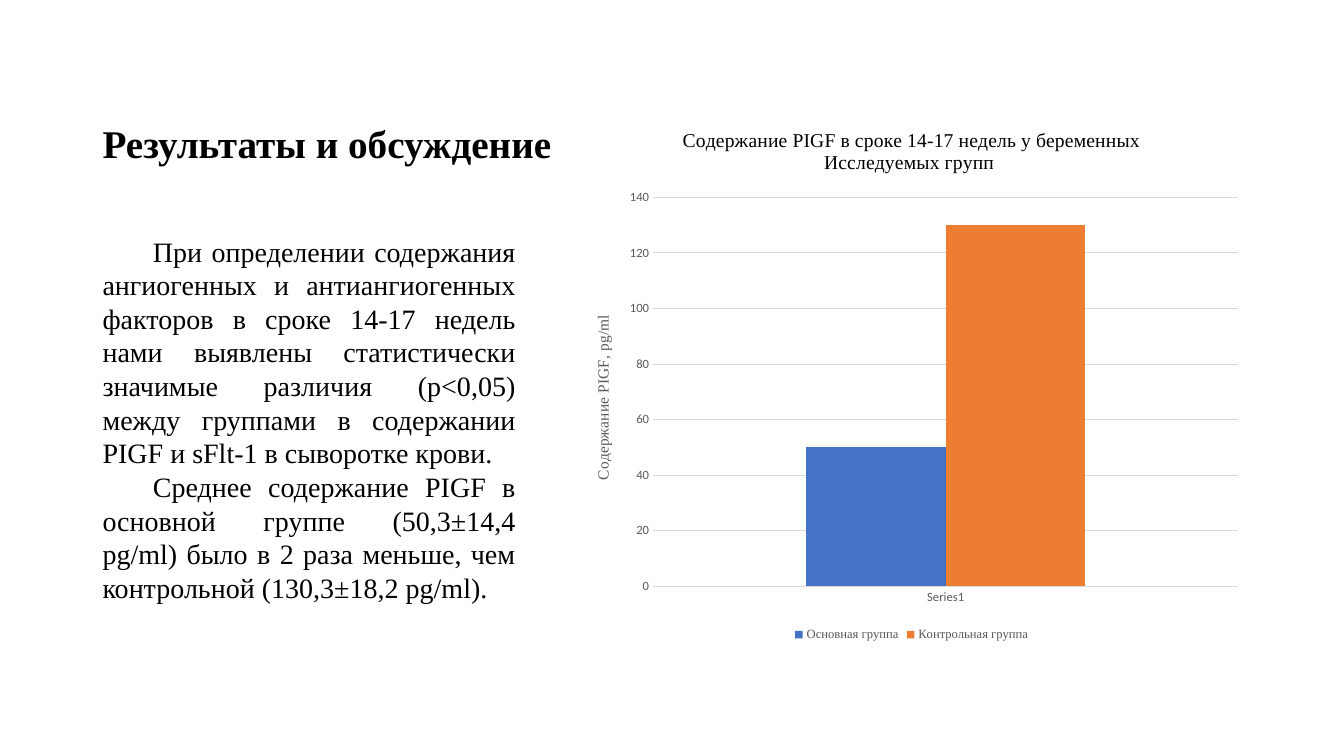
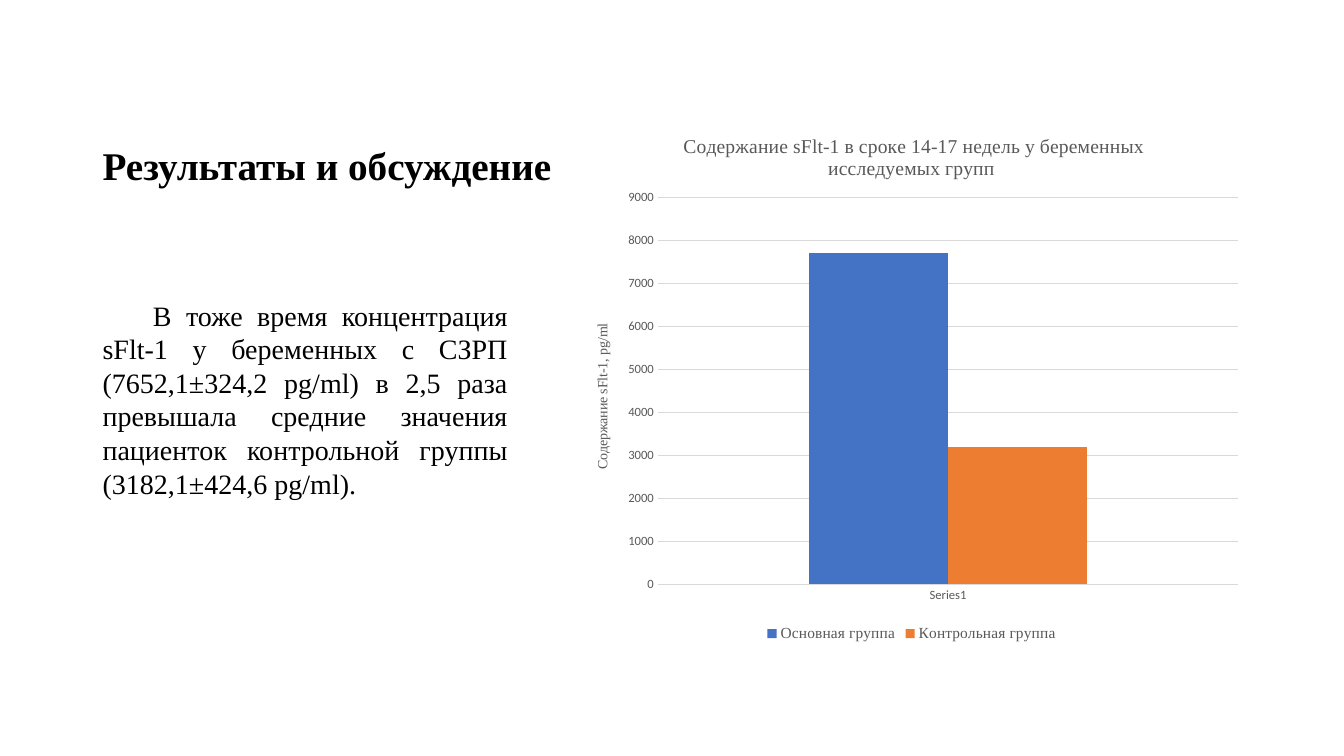
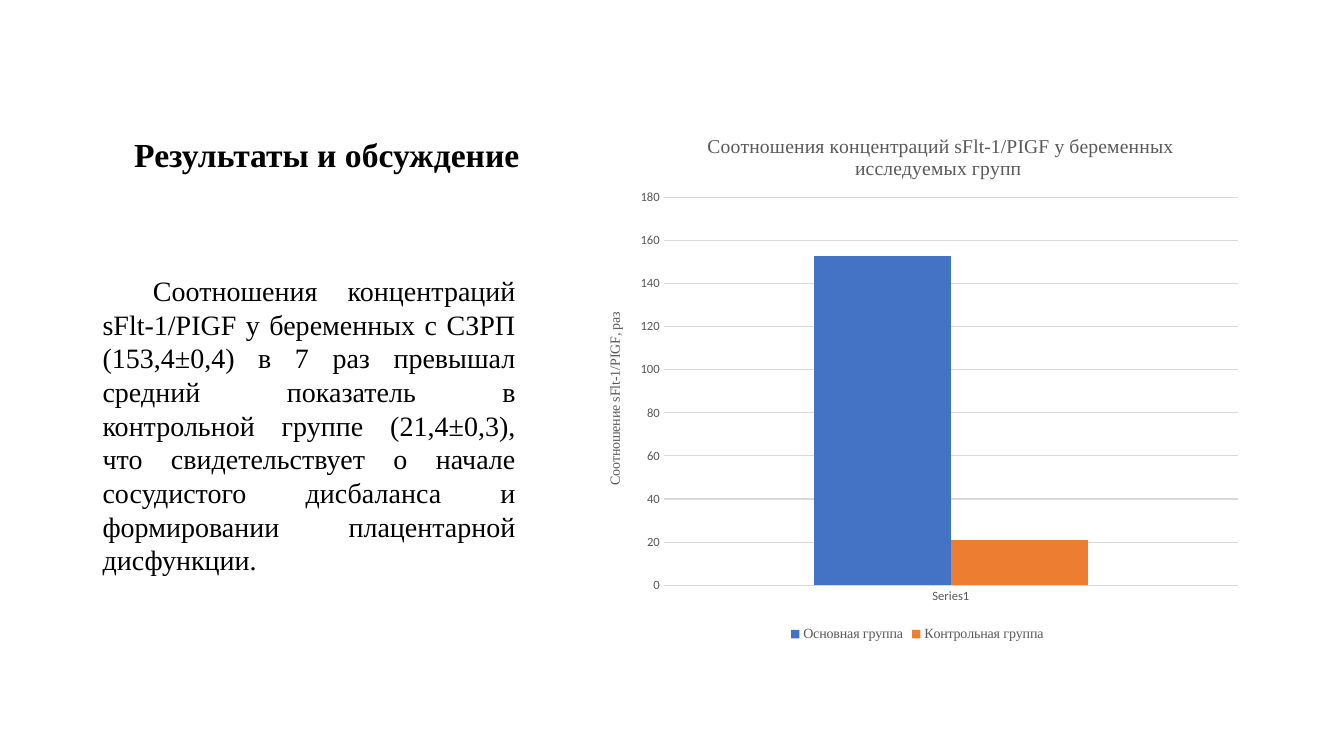
from lxml import etree
from pptx import Presentation
from pptx.chart.data import CategoryChartData
from pptx.dml.color import RGBColor
from pptx.enum.chart import XL_CHART_TYPE, XL_LEGEND_POSITION, XL_TICK_MARK
from pptx.enum.text import MSO_ANCHOR, MSO_AUTO_SIZE, PP_ALIGN
from pptx.oxml import parse_xml
from pptx.oxml.ns import nsdecls, qn
from pptx.util import Cm, Pt

CLUSTERED = XL_CHART_TYPE.COLUMN_CLUSTERED
LEGEND_BOTTOM = XL_LEGEND_POSITION.BOTTOM
NO_TICK = XL_TICK_MARK.NONE
MIDDLE = MSO_ANCHOR.MIDDLE
NO_AUTOFIT = MSO_AUTO_SIZE.NONE
LEFT, CENTER, JUSTIFY = PP_ALIGN.LEFT, PP_ALIGN.CENTER, PP_ALIGN.JUSTIFY

COLORS = {
    "text": "000000",
    "muted": "595959",
    "line": "D9D9D9",
    "Основная группа": "4472C4",
    "Контрольная группа": "ED7D31",
}
SERIF = "Times New Roman"
SANS = "Calibri"
TITLE = "Результаты и обсуждение"
LEFT_EDGE, TOP_EDGE, CHART_HEIGHT = 2.33, 2.74, 13.54

# Plot areas and chart title positions are percentages of the chart.
SLIDES = [
    {
        "title": {"width": 12.07, "height": 1.88, "size": 28, "align": LEFT},
        "body": {"top": 4.83, "width": 10.92, "height": 11.48, "bottom_margin": 0.15},
        "paragraphs": [
            "При определении содержания ангиогенных и антиангиогенных факторов в сроке "
            "14-17 недель нами выявлены статистически значимые различия (p<0,05) между "
            "группами в содержании PIGF и sFlt-1 в сыворотке крови.",
            "Среднее содержание PIGF в основной группе (50,3±14,4 pg/ml) было в 2 раза "
            "меньше, чем контрольной (130,3±18,2 pg/ml).",
        ],
        "chart": {"left": 14.4, "width": 17.15, "maximum": 140, "step": 20},
        "plot_area": {"x": 12, "y": 16.5, "w": 86, "h": 72.4},
        "chart_title": ["Содержание PIGF в сроке 14-17 недель у беременных",
                        "Исследуемых групп "],
        "chart_title_color": "text",
        "chart_title_position": None,
        "axis_title": "Содержание PIGF, pg/ml",
        "axis_title_size": 11,
        "legend_size": 9,
        "values": [50, 130],
    },
    {
        "title": {"width": 11.84, "height": 2.97, "size": 28, "align": LEFT},
        "body": {"top": 6.4, "width": 10.72, "height": 7.92, "bottom_margin": 0.74},
        "paragraphs": [
            "В тоже время концентрация sFlt-1 у беременных с СЗРП (7652,1±324,2 pg/ml) "
            "в 2,5 раза превышала средние значения пациенток контрольной группы "
            "(3182,1±424,6 pg/ml).",
        ],
        "chart": {"left": 14.4, "width": 17.15, "maximum": 9000, "step": 1000},
        "plot_area": {"x": 12.7, "y": 16.5, "w": 85.3, "h": 72},
        "chart_title": ["Содержание sFlt-1 в сроке 14-17 недель у беременных",
                        "исследуемых групп "],
        "chart_title_color": "muted",
        "chart_title_position": {"x": 16, "y": 4},
        "axis_title": "Содержание sFlt-1, pg/ml",
        "axis_title_size": 10,
        "legend_size": 11,
        "values": [7700, 3200],
    },
    {
        "title": {"width": 11.81, "height": 2.41, "size": 24, "align": CENTER},
        "body": {"top": 5.72, "width": 10.92, "height": 10.59, "bottom_margin": 0.74},
        "paragraphs": [
            "Соотношения концентраций sFlt-1/PIGF у беременных с СЗРП (153,4±0,4) в 7 раз "
            "превышал средний показатель в контрольной группе (21,4±0,3), что "
            "свидетельствует о начале сосудистого дисбаланса и формировании плацентарной "
            "дисфункции.",
        ],
        "chart": {"left": 14.71, "width": 16.81, "maximum": 180, "step": 20},
        "plot_area": {"x": 12, "y": 16.5, "w": 86.1, "h": 72.2},
        "chart_title": ["Соотношения концентраций sFlt-1/PIGF у беременных",
                        "исследуемых групп "],
        "chart_title_color": "muted",
        "chart_title_position": {"x": 18.1, "y": 4},
        "axis_title": "Соотношение sFlt-1/PIGF, раз ",
        "axis_title_size": 10,
        "legend_size": 10,
        "values": [153, 21],
    },
]


def format_font(font, size, color="muted", name=SERIF, bold=False):
    font.size = Pt(size)
    font.name = name
    font.bold = bold
    font.color.rgb = RGBColor.from_string(COLORS[color])


def write_text(frame, lines, align=None, spacing=None, first_indent=None, **font_format):
    """Fill a text frame with one paragraph per line, all in one format."""
    frame.text = "\n".join(lines)
    for paragraph in frame.paragraphs:
        if align is not None:
            paragraph.alignment = align
        if spacing is not None:
            paragraph.line_spacing = spacing
            paragraph.space_before = Pt(0)
        if first_indent is not None:
            properties = paragraph._p.get_or_add_pPr()
            properties.set("marL", "0")
            properties.set("indent", str(first_indent))
            etree.SubElement(properties, qn("a:buNone"))
        for run in paragraph.runs:
            format_font(run.font, **font_format)


presentation = Presentation()
presentation.slide_width = Cm(33.87)
presentation.slide_height = Cm(19.05)
layout = presentation.slide_layouts[1]

for content in SLIDES:
    slide = presentation.slides.add_slide(layout)
    title, body = slide.placeholders
    title_format, body_format = content["title"], content["body"]

    title.left, title.top = Cm(LEFT_EDGE), Cm(TOP_EDGE)
    title.width, title.height = Cm(title_format["width"]), Cm(title_format["height"])
    write_text(title.text_frame, [TITLE], align=title_format["align"], spacing=0.9,
               size=title_format["size"], color="text", bold=True)

    body.left, body.top = Cm(LEFT_EDGE), Cm(body_format["top"])
    body.width, body.height = Cm(body_format["width"]), Cm(body_format["height"])
    body.text_frame.margin_bottom = Cm(body_format["bottom_margin"])
    write_text(body.text_frame, content["paragraphs"], align=JUSTIFY, spacing=Pt(24),
               first_indent=Cm(1.27), size=20, color="text")

    for placeholder in (title, body):
        placeholder.text_frame.vertical_anchor = MIDDLE
        placeholder.text_frame.auto_size = NO_AUTOFIT

    chart_data = CategoryChartData()
    chart_data.categories = ["Series1"]
    for name, value in zip(("Основная группа", "Контрольная группа"), content["values"]):
        chart_data.add_series(name, [value])
    chart_format = content["chart"]
    chart = slide.shapes.add_chart(
        CLUSTERED, Cm(chart_format["left"]), Cm(TOP_EDGE),
        Cm(chart_format["width"]), Cm(CHART_HEIGHT), chart_data).chart
    format_font(chart.font, 10, color="text", name=SANS)
    write_text(chart.chart_title.text_frame, content["chart_title"], size=14,
               color=content["chart_title_color"])

    chart.has_legend = True
    chart.legend.position = LEGEND_BOTTOM
    chart.legend.include_in_layout = False
    format_font(chart.legend.font, content["legend_size"])

    plot = chart.plots[0]
    plot.gap_width = 219
    plot.overlap = 0
    plot.vary_by_categories = False
    for series in plot.series:
        series.format.fill.solid()
        series.format.fill.fore_color.rgb = RGBColor.from_string(COLORS[series.name])

    category_axis, value_axis = chart.category_axis, chart.value_axis
    for axis in (category_axis, value_axis):
        axis.major_tick_mark = axis.minor_tick_mark = NO_TICK
        format_font(axis.tick_labels.font, 9, name=SANS)
    value_axis.minimum_scale = 0
    value_axis.maximum_scale = chart_format["maximum"]
    value_axis.major_unit = chart_format["step"]
    value_axis.format.line.fill.background()
    write_text(value_axis.axis_title.text_frame, [content["axis_title"]],
               size=content["axis_title_size"])
    for line in (category_axis.format.line, value_axis.major_gridlines.format.line):
        line.width = Pt(0.75)
        line.color.rgb = RGBColor.from_string(COLORS["line"])

    chart_element = chart._chartSpace.chart
    for element, index, target, percentages in (
        (chart_element.plotArea, 0, '<c:layoutTarget val="inner"/>', content["plot_area"]),
        (chart_element.find(qn("c:title")), 1, "", content["chart_title_position"]),
    ):
        if percentages is None:
            continue
        for old_layout in element.findall(qn("c:layout")):
            element.remove(old_layout)
        sizes = "".join(f'<c:{key} val="{value / 100:.3f}"/>'
                        for key, value in percentages.items())
        element.insert(index, parse_xml(
            f'<c:layout {nsdecls("c")}><c:manualLayout>{target}<c:xMode val="edge"/>'
            f'<c:yMode val="edge"/>{sizes}</c:manualLayout></c:layout>'))

presentation.save("out.pptx")
